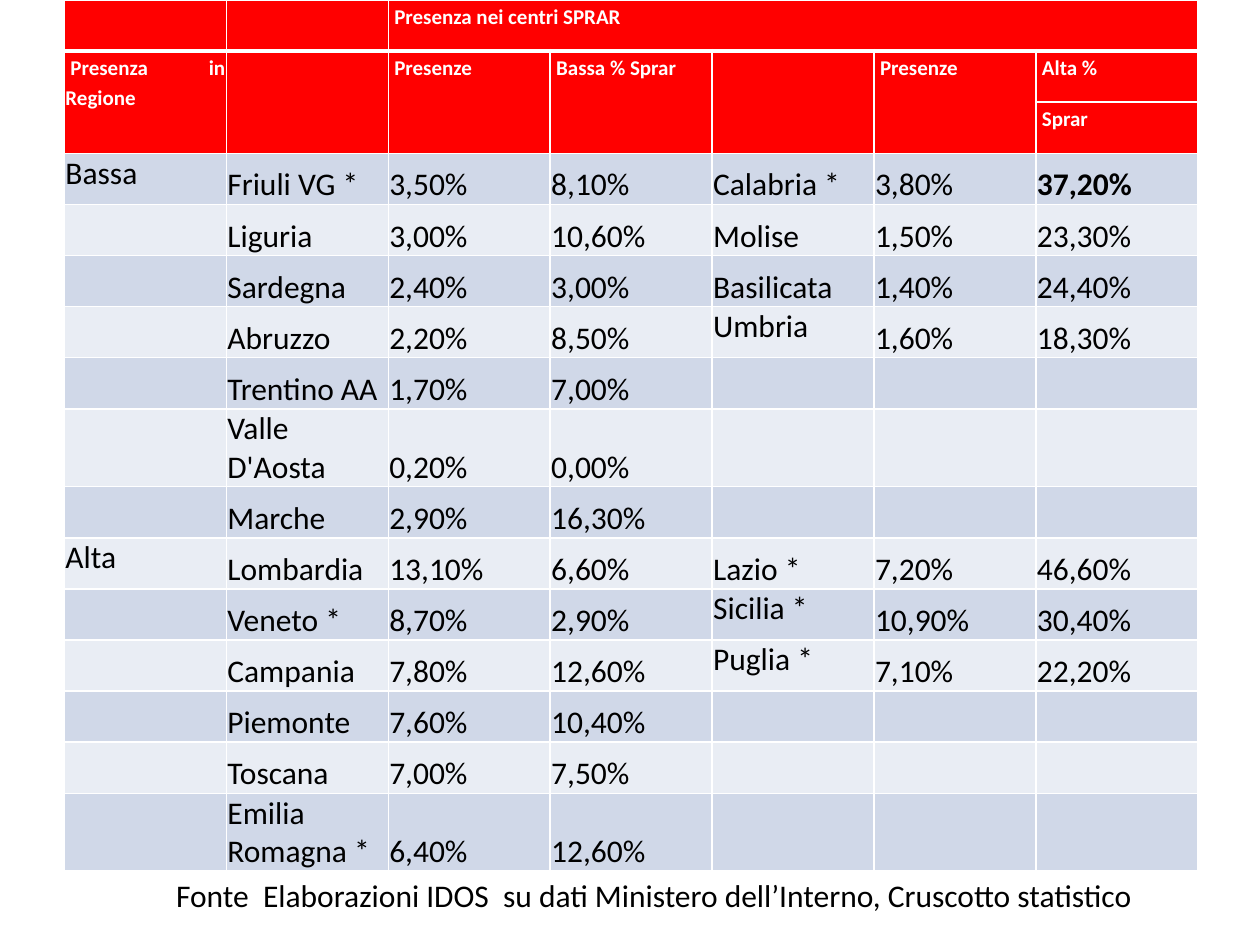
from dataclasses import dataclass

from lxml.etree import SubElement
from pptx import Presentation
from pptx.dml.color import RGBColor as Color
from pptx.enum.text import MSO_ANCHOR as Anchor, PP_ALIGN as Align
from pptx.oxml import parse_xml
from pptx.oxml.ns import nsdecls, qn
from pptx.util import Cm, Pt


@dataclass(frozen=True)
class Theme:
    """Colours and type of the slide."""
    font: str = "Calibri"
    header_size: int = 12
    body_size: int = 18
    red: str = "FF0000"
    white: str = "FFFFFF"
    black: str = "000000"
    bands: tuple = ("D0D8E8", "E9EDF4")


THEME = Theme()
COLUMNS = 7
HEADER = [
    ["", "", "Presenza nei centri SPRAR"],
    ["Presenza  in Regione", "", "Presenze", "Bassa % Sprar", "", "Presenze", "Alta % "],
    ["", "", "", "", "", "", "Sprar"],
]
REGIONS = [
    ["Bassa", "Friuli VG *", "3,50%", "8,10%", "Calabria *", "3,80%", "37,20%"],
    ["", "Liguria ", "3,00%", "10,60%", "Molise", "1,50%", "23,30%"],
    ["", "Sardegna", "2,40%", "3,00%", "Basilicata", "1,40%", "24,40%"],
    ["", "Abruzzo ", "2,20%", "8,50%", "Umbria", "1,60%", "18,30%"],
    ["", "Trentino AA", "1,70%", "7,00%"],
    ["", "Valle D'Aosta", "0,20%", "0,00%"],
    ["", "Marche", "2,90%", "16,30%"],
    ["Alta", "Lombardia ", "13,10%", "6,60%", "Lazio *", "7,20%", "46,60%"],
    ["", "Veneto *", "8,70%", "2,90%", "Sicilia *", "10,90%", "30,40%"],
    ["", "Campania", "7,80%", "12,60%", "Puglia *", "7,10%", "22,20%"],
    ["", "Piemonte ", "7,60%", "10,40%"],
    ["", "Toscana", "7,00%", "7,50%"],
    ["", "Emilia Romagna *", "6,40%", "12,60%"],
]
TOP_ANCHORED = {"Bassa", "Alta", "Umbria", "Sicilia *", "Puglia *"}
EMPHASISED = {"37,20%"}


def add_run(paragraph, text, size, color, bold=False):
    """Add one formatted run to a paragraph."""
    run = paragraph.add_run()
    run.text = text
    run.font.name = THEME.font
    run.font.size = Pt(size)
    run.font.bold = bold
    run.font.color.rgb = Color.from_string(color)


def set_borders(cell, bottom_width):
    """Draw white borders around a cell, ahead of its fill."""
    properties = cell._tc.get_or_add_tcPr()
    widths = {"lnL": 1, "lnR": 1, "lnT": 1, "lnB": bottom_width}
    for index, (side, width) in enumerate(widths.items()):
        line = parse_xml(f'<a:{side} {nsdecls("a")} w="{Pt(width)}"/>')
        fill = SubElement(line, qn("a:solidFill"))
        SubElement(fill, qn("a:srgbClr"), val=THEME.white)
        properties.insert(index, line)


def format_cell(cell, fill, bottom_width=1):
    """Give a cell its fill, narrow margins and borders."""
    cell.fill.solid()
    cell.fill.fore_color.rgb = Color.from_string(fill)
    cell.margin_left = cell.margin_right = cell.margin_top = Cm(0.02)
    cell.margin_bottom = 0
    set_borders(cell, bottom_width)


def fill_header_cell(cell, text, bottom_width):
    """Write a bold white heading on red."""
    format_cell(cell, THEME.red, bottom_width)
    if text:
        paragraph = cell.text_frame.paragraphs[0]
        paragraph.alignment = Align.JUSTIFY
        paragraph.line_spacing = 1.15
        paragraph.space_after = Pt(6)
        paragraph._p.get_or_add_pPr().set("indent", str(Cm(0.1)))
        add_run(paragraph, text, THEME.header_size, THEME.white, bold=True)


def fill_body_cell(cell, text, fill):
    """Write a region name or a percentage on its band."""
    format_cell(cell, fill)
    if text:
        cell.vertical_anchor = Anchor.TOP if text in TOP_ANCHORED else Anchor.BOTTOM
        paragraph = cell.text_frame.paragraphs[0]
        paragraph.alignment = Align.JUSTIFY
        add_run(paragraph, text, THEME.body_size, THEME.black, text in EMPHASISED)


def pad(texts):
    """Extend a row with empty texts to the full column count."""
    return texts + [""] * (COLUMNS - len(texts))


def add_region_table(slide):
    """Add the table of regional shares."""
    row_count = len(HEADER) + len(REGIONS)
    frame = slide.shapes.add_table(
        row_count, COLUMNS, Cm(1.3), 0, Cm(22.85), Cm(1.03 * row_count))
    table = frame.table
    for row, texts in enumerate(HEADER):
        for column, text in enumerate(pad(texts)):
            fill_header_cell(table.cell(row, column), text, 1 if row else 3)
    for row, texts in enumerate(REGIONS):
        for column, text in enumerate(pad(texts)):
            cell = table.cell(row + len(HEADER), column)
            fill_body_cell(cell, text, THEME.bands[row % 2])
    table.cell(0, 2).merge(table.cell(0, COLUMNS - 1))
    for column in range(COLUMNS - 1):
        table.cell(1, column).merge(table.cell(2, column))


def add_source_note(slide, text):
    """Add the line that names the data source."""
    box = slide.shapes.add_textbox(Cm(3.3), Cm(17.53), Cm(20.8), Cm(1.02))
    box.text_frame.word_wrap = True
    add_run(box.text_frame.paragraphs[0], text, THEME.body_size, THEME.black)


def main():
    """Build and save the slide."""
    presentation = Presentation()
    presentation.slide_width, presentation.slide_height = Cm(25.4), Cm(19.05)
    slide = presentation.slides.add_slide(presentation.slide_layouts[6])
    add_region_table(slide)
    add_source_note(slide, "Fonte  Elaborazioni IDOS  su dati Ministero dell’Interno, "
                           "Cruscotto statistico")
    presentation.save("out.pptx")


if __name__ == "__main__":
    main()
